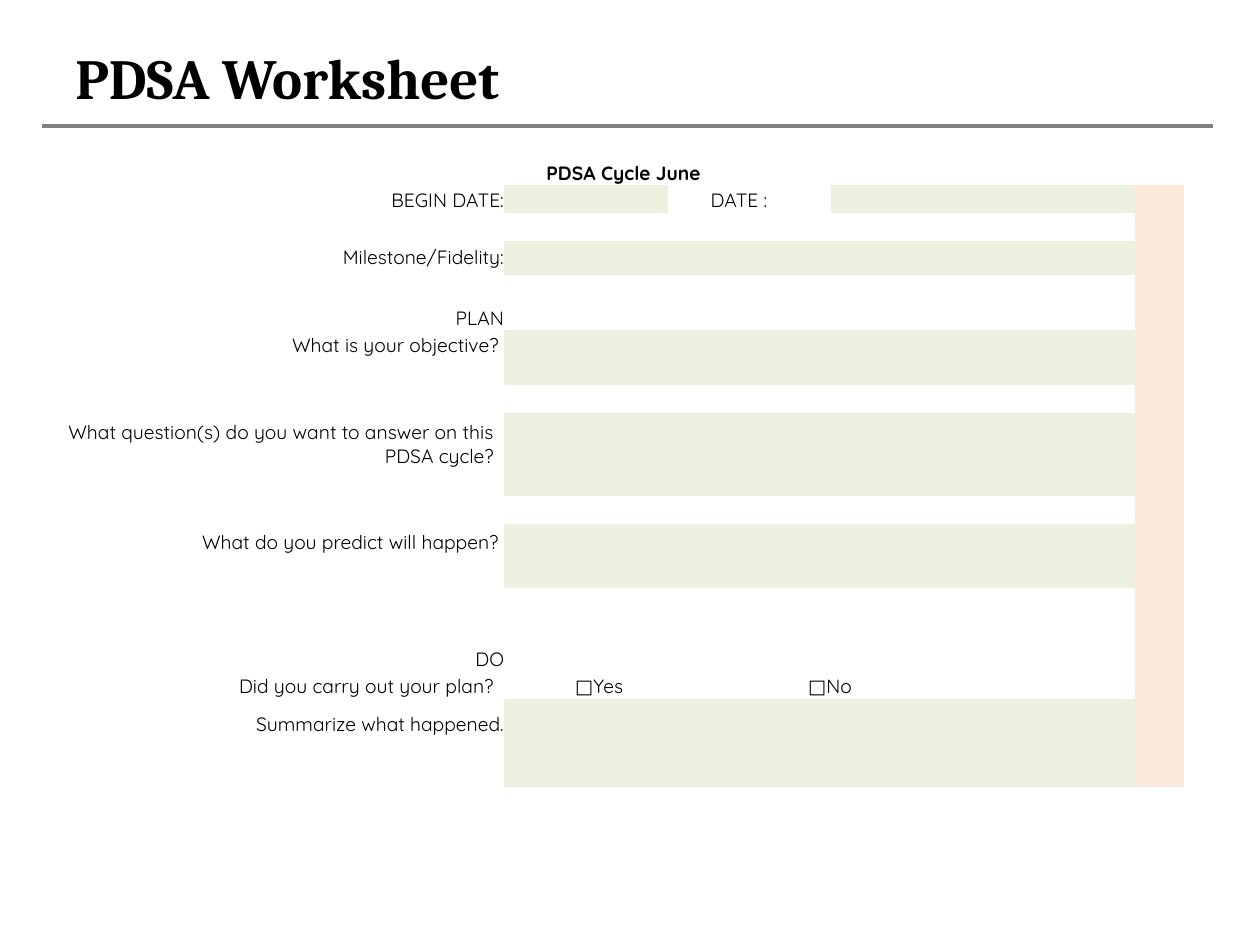
from lxml.etree import SubElement
from pptx import Presentation
from pptx.dml.color import RGBColor
from pptx.enum.shapes import MSO_CONNECTOR
from pptx.enum.text import MSO_ANCHOR, PP_ALIGN
from pptx.oxml.ns import qn
from pptx.util import Inches, Pt

WHITE, GREEN, PEACH = "FFFFFF", "EBF1DE", "FDE9D9"
NO_STYLE = "{2D5ABB26-0587-4C30-8999-92F81FD0307C}"
BODY_SIZE = 11
SPACE = 0.04  # width of one space in the body text

COLUMNS = [3.5, 0.71, 0.59, 0.34, 0.92, 0.03, 0.89, 1.52, 0.39]
ROW = 0.22
TALL_ROWS = {3: 0.27, 9: 0.44, 12: 0.24, 13: 0.27, 18: 0.3, 19: 0.4}
ROW_COUNT = 20
LAST = len(COLUMNS) - 1

# Answer areas: row, column, rows, columns
ANSWERS = [(1, 1, 1, 2), (1, 6, 1, 2), (3, 1, 1, 7)]
ANSWERS += [(row, 1, 2, 7) for row in (6, 9, 12, 18)]

# Merged white cells, in the same form
BLANKS = [(0, 0, 1, 9), (1, 4, 1, 2), (2, 1, 1, 2), (2, 6, 1, 2), (11, 1, 1, 7)]
BLANKS += [(row, column, 1, 2) for row in (4, 5, 8, 14, 15, 16, 17) for column in (2, 5)]

# Right-aligned questions by row: text, right margin
QUESTIONS = {
    1: ("BEGIN DATE:", 0),
    3: ("Milestone/Fidelity:", 0),
    5: ("PLAN", 0),
    6: ("What is your objective?", SPACE),
    9: ("What question(s) do you want to answer on this PDSA cycle?", 2 * SPACE),
    12: ("What do you predict will happen?", SPACE),
    16: ("DO", 0),
    17: ("Did you carry out your plan?", 2 * SPACE),
    18: ("Summarize what happened.", 0),
}


def color(value):
    return RGBColor.from_string(value)


def write(frame, text, size=BODY_SIZE, font="Quicksand", bold=False, align=PP_ALIGN.LEFT):
    paragraph = frame.paragraphs[0]
    paragraph.alignment = align
    run = paragraph.add_run()
    run.text = text
    run.font.size = Pt(size)
    run.font.name = font
    run.font.bold = bold
    run.font.color.rgb = color("000000")


def add_heading(slide, left, top, width, height):
    # Rule under the title
    line = slide.shapes.add_connector(
        MSO_CONNECTOR.STRAIGHT, Inches(0.33), Inches(1), Inches(9.63), Inches(1))
    line.line.color.rgb = color("808080")
    line.line.width = Pt(2.25)
    SubElement(line._element.spPr, qn("a:effectLst"))

    # Title
    title = slide.shapes.add_textbox(Inches(left), Inches(top), Inches(width), Inches(height))
    title.text_frame.word_wrap = True
    title.text_frame.vertical_anchor = MSO_ANCHOR.MIDDLE
    write(title.text_frame, "PDSA Worksheet", size=32.4, font="Cambria", bold=True)


def format_cell(cell, fill):
    cell.fill.solid()
    cell.fill.fore_color.rgb = color(fill)
    cell.margin_left = cell.margin_right = cell.margin_top = cell.margin_bottom = 0
    cell.vertical_anchor = MSO_ANCHOR.BOTTOM
    # Keep empty cells as low as their rows
    SubElement(cell.text_frame.paragraphs[0]._p, qn("a:endParaRPr"), sz=str(BODY_SIZE * 100))


def add_worksheet(slide, left, top, width, height):
    frame = slide.shapes.add_table(
        ROW_COUNT, len(COLUMNS), Inches(left), Inches(top), Inches(width), Inches(height))
    table = frame.table
    table.first_row = table.horz_banding = False
    table._tbl.tblPr.find(qn("a:tableStyleId")).text = NO_STYLE
    for column, column_width in zip(table.columns, COLUMNS):
        column.width = Inches(column_width)

    # Cell fills, with the peach strip on the right
    for index, row in enumerate(table.rows):
        row.height = Inches(TALL_ROWS.get(index, ROW))
        for column, cell in enumerate(row.cells):
            format_cell(cell, PEACH if column == LAST and index else WHITE)

    # Merged cells
    for areas, fill in ((ANSWERS, GREEN), (BLANKS, WHITE)):
        for row, column, rows, columns in areas:
            cell = table.cell(row, column)
            cell.merge(table.cell(row + rows - 1, column + columns - 1))
            cell.fill.fore_color.rgb = color(fill)

    # Questions
    for row, (text, margin) in QUESTIONS.items():
        cell = table.cell(row, 0)
        cell.margin_right = Inches(margin)
        write(cell.text_frame, text, align=PP_ALIGN.RIGHT)
    table.cell(3, 0).vertical_anchor = MSO_ANCHOR.MIDDLE

    # Heading, date and choices
    write(table.cell(0, 0).text_frame, "PDSA Cycle June", bold=True, align=PP_ALIGN.CENTER)
    write(table.cell(1, 4).text_frame, "DATE :")
    for column, choice in ((1, "Yes"), (4, "No")):
        write(table.cell(17, column).text_frame, "□", align=PP_ALIGN.RIGHT)
        write(table.cell(17, column + 1).text_frame, choice)


def main():
    presentation = Presentation()
    presentation.slide_width = Inches(10)
    presentation.slide_height = Inches(7.5)
    slide = presentation.slides.add_slide(presentation.slide_layouts[6])
    add_heading(slide, 0.5, 0.3, 9, 0.62)
    add_worksheet(slide, 0.5, 1.25, sum(COLUMNS), 5)
    presentation.save("out.pptx")


if __name__ == "__main__":
    main()
